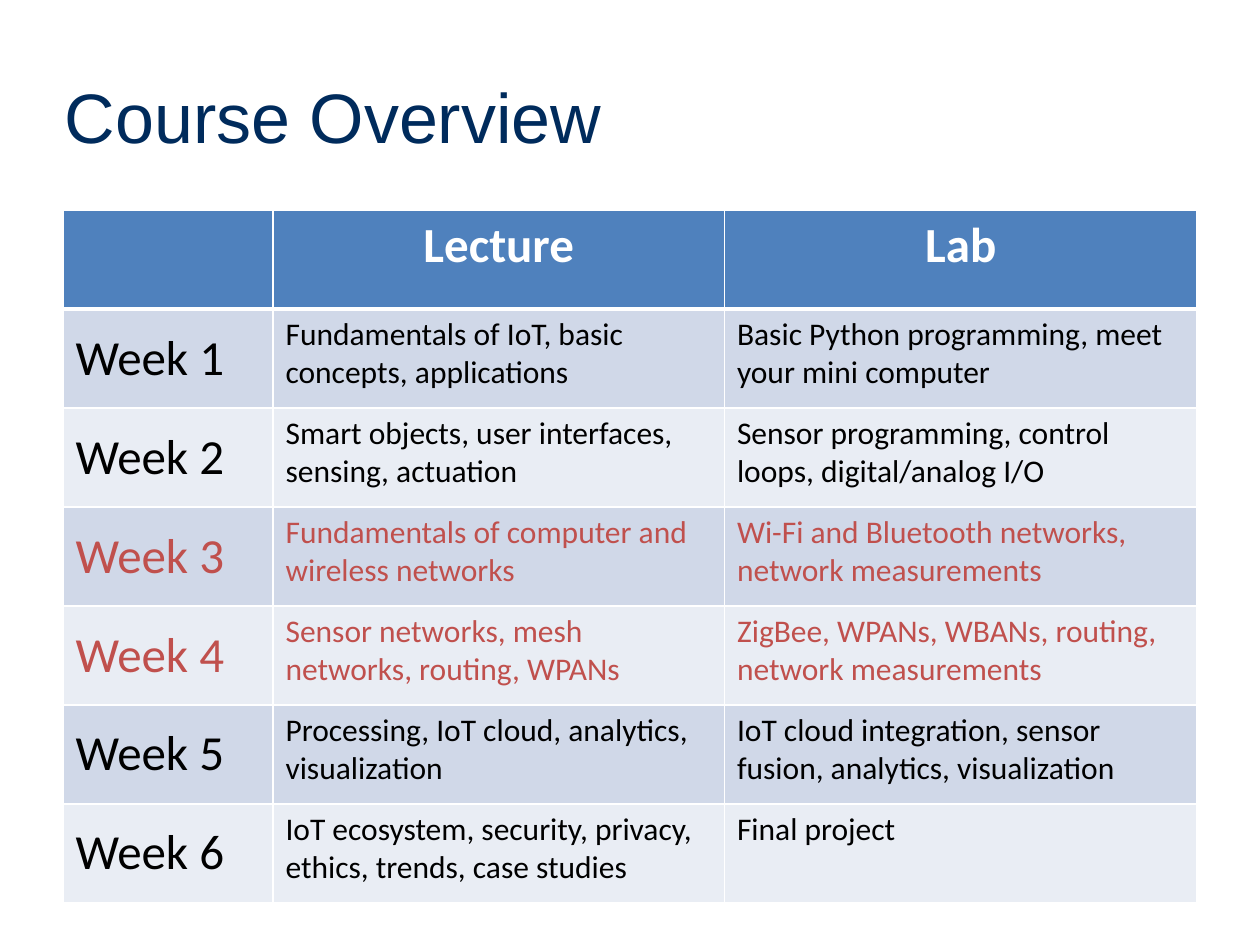
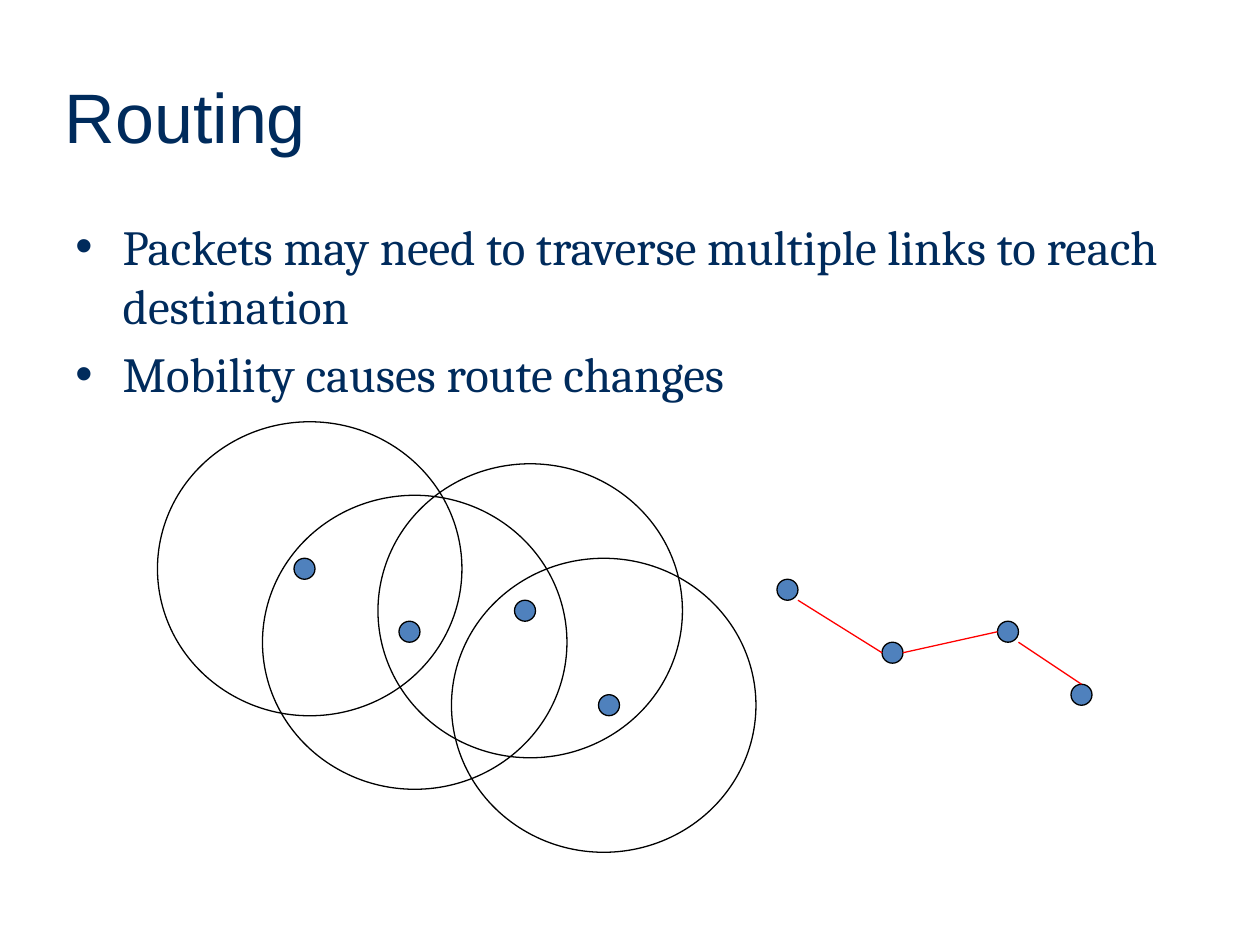
from dataclasses import dataclass

from lxml.etree import SubElement
from pptx import Presentation
from pptx.dml.color import RGBColor
from pptx.enum.shapes import MSO_CONNECTOR, MSO_SHAPE
from pptx.enum.text import MSO_ANCHOR, PP_ALIGN
from pptx.oxml.ns import qn
from pptx.util import Pt


@dataclass(frozen=True)
class Theme:
    navy: str = "002B5C"
    blue: str = "4F81BD"
    band_dark: str = "D0D8E8"
    band_light: str = "E9EDF4"
    red: str = "C0504D"
    link: str = "FF0000"
    black: str = "000000"
    white: str = "FFFFFF"
    title_font: str = "Arial"
    body_font: str = "Cambria"
    table_font: str = "Calibri"
    title_size: float = 40
    large: float = 28
    small: float = 18
    line: float = 0.75


T = Theme()
TITLE_BOX = (30, 30, 654, 72)
TABLE_BOX = (36, 120, 648, 396)
BODY_BOX = (36, 120, 648, 362)
NETWORK_ORIGIN = (90, 241)

COLUMN_WIDTHS = (120, 258, 270)
HEADINGS = ("", "Lecture", "Lab")
WEEKS = [
    ("Fundamentals of IoT, basic concepts, applications",
     "Basic Python programming, meet your mini computer"),
    ("Smart objects, user interfaces, sensing, actuation",
     "Sensor programming, control loops, digital/analog I/O"),
    ("Fundamentals of computer and wireless networks",
     "Wi-Fi and Bluetooth networks, network measurements"),
    ("Sensor networks, mesh networks, routing, WPANs",
     "ZigBee, WPANs, WBANs, routing, network measurements"),
    ("Processing, IoT cloud, analytics, visualization",
     "IoT cloud integration, sensor fusion, analytics, visualization"),
    ("IoT ecosystem, security, privacy, ethics, trends, case studies",
     "Final project"),
]
HIGHLIGHTED_WEEKS = (3, 4)

RANGE_SIZE = (174, 168)
NODE = 12
RANGES = [(0, 0), (60, 42), (126, 24), (168, 78)]
RANGE_NODES = [(78, 78), (138, 114), (204, 102), (252, 156)]
ROUTE_NODES = [(354, 90), (414, 126), (480, 114), (522, 150)]
LINK_ENDS = [((1, 1), (0, 0.5)), ((1, 0.5), (0, 0.5)), ((1, 1), (0.5, 0))]


def rgb(color):
    return RGBColor.from_string(color)


def style(p, font, size, color, bold=False):
    for r in p.runs:
        r.font.name = font
        r.font.size = Pt(size)
        r.font.bold = bold
        r.font.color.rgb = rgb(color)


def add_text_box(s, box):
    tf = s.shapes.add_textbox(*map(Pt, box)).text_frame
    tf.word_wrap = True
    return tf


def add_title(s, text, box=TITLE_BOX):
    tf = add_text_box(s, box)
    tf.vertical_anchor = MSO_ANCHOR.MIDDLE
    tf.text = text
    style(tf.paragraphs[0], T.title_font, T.title_size, T.navy)


def add_bullets(s, box, items):
    tf = add_text_box(s, box)
    tf.text = "\n".join(items)
    for i, p in enumerate(tf.paragraphs):
        pPr = p._p.get_or_add_pPr()
        pPr.set("marL", str(Pt(27)))
        pPr.set("indent", str(Pt(-27)))
        SubElement(pPr, qn("a:buFont")).set("typeface", "Arial")
        SubElement(pPr, qn("a:buChar")).set("char", "•")
        if i:
            p.space_before = Pt(5.6)
        style(p, T.body_font, T.large, T.navy)


def add_borders(cell, **widths):
    tcPr = cell._tc.get_or_add_tcPr()
    for i, side in enumerate("LRTB"):
        ln = tcPr.makeelement(qn(f"a:ln{side}"), {"w": str(Pt(widths.get(side, 1)))})
        fill = SubElement(ln, qn("a:solidFill"))
        SubElement(fill, qn("a:srgbClr")).set("val", T.white)
        tcPr.insert(i, ln)


def fill_cell(cell, text, size, color, fill, bold=False):
    cell.text = text
    cell.fill.solid()
    cell.fill.fore_color.rgb = rgb(fill)
    style(cell.text_frame.paragraphs[0], T.table_font, size, color, bold)


def add_schedule(s, box):
    rows = len(WEEKS) + 1
    table = s.shapes.add_table(rows, len(HEADINGS), *map(Pt, box)).table
    for column, width in zip(table.columns, COLUMN_WIDTHS):
        column.width = Pt(width)
    for row in table.rows:
        row.height = Pt(box[3] / rows)
    for j, heading in enumerate(HEADINGS):
        cell = table.cell(0, j)
        fill_cell(cell, heading, T.large, T.white, T.blue, True)
        cell.text_frame.paragraphs[0].alignment = PP_ALIGN.CENTER
        add_borders(cell, B=3)
    for week, topics in enumerate(WEEKS, 1):
        color = T.red if week in HIGHLIGHTED_WEEKS else T.black
        band = T.band_dark if week % 2 else T.band_light
        for j, text in enumerate((f"Week {week}", *topics)):
            cell = table.cell(week, j)
            fill_cell(cell, text, T.small if j else T.large, color, band)
            add_borders(cell, T=3 if week == 1 else 1)
        table.cell(week, 0).vertical_anchor = MSO_ANCHOR.MIDDLE


def add_ellipse(s, x, y, w, h, fill=None):
    sp = s.shapes.add_shape(MSO_SHAPE.OVAL, Pt(x), Pt(y), Pt(w), Pt(h))
    sp.shadow.inherit = False
    sp.line.color.rgb = rgb(T.black)
    sp.line.width = Pt(T.line)
    if fill:
        sp.fill.solid()
        sp.fill.fore_color.rgb = rgb(fill)
    else:
        sp.fill.background()


def add_link(s, x1, y1, x2, y2):
    cxn = s.shapes.add_connector(MSO_CONNECTOR.STRAIGHT, Pt(x1), Pt(y1), Pt(x2), Pt(y2))
    cxn.line.color.rgb = rgb(T.link)
    cxn.line.width = Pt(T.line)
    SubElement(cxn._element.spPr, qn("a:effectLst"))


def add_network(s, origin):
    left, top = origin
    for i, (x, y) in enumerate(RANGES):
        add_ellipse(s, left + x, top + y, *RANGE_SIZE, fill=None if i else T.white)
    for x, y in RANGE_NODES + ROUTE_NODES:
        add_ellipse(s, left + x, top + y, NODE, NODE, T.blue)
    for a, b, ends in zip(ROUTE_NODES, ROUTE_NODES[1:], LINK_ENDS):
        points = [start + node + NODE * part
                  for place, end in zip((a, b), ends)
                  for start, node, part in zip(origin, place, end)]
        add_link(s, *points)


def add_slide(prs, title):
    s = prs.slides.add_slide(prs.slide_layouts[6])
    add_title(s, title)
    return s


def overview_slide(prs):
    s = add_slide(prs, "Course Overview")
    add_schedule(s, TABLE_BOX)


def routing_slide(prs):
    s = add_slide(prs, "Routing")
    add_bullets(s, BODY_BOX, [
        "Packets may need to traverse multiple links to reach destination",
        "Mobility causes route changes",
    ])
    add_network(s, NETWORK_ORIGIN)


def main():
    prs = Presentation()
    prs.slide_width, prs.slide_height = Pt(720), Pt(540)
    overview_slide(prs)
    routing_slide(prs)
    prs.save("out.pptx")


if __name__ == "__main__":
    main()
